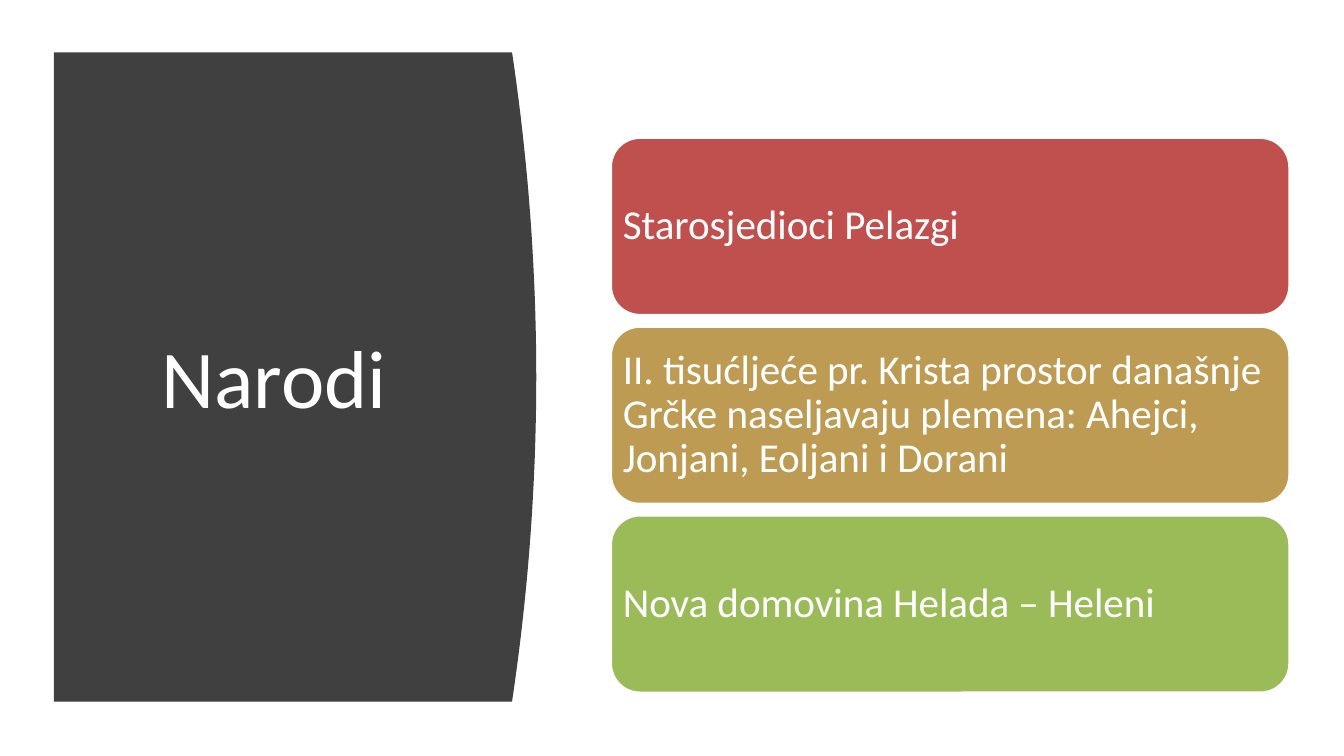
from dataclasses import dataclass

from pptx import Presentation
from pptx.dml.color import RGBColor
from pptx.enum.shapes import MSO_SHAPE
from pptx.enum.text import MSO_ANCHOR, MSO_AUTO_SIZE, PP_ALIGN
from pptx.util import Inches, Pt

ROUND = MSO_SHAPE.ROUNDED_RECTANGLE
MIDDLE = MSO_ANCHOR.MIDDLE
NO_FIT = MSO_AUTO_SIZE.NONE
LEFT, CENTER = PP_ALIGN.LEFT, PP_ALIGN.CENTER


@dataclass(frozen=True)
class Theme:
    font: str = "Calibri"
    white: RGBColor = RGBColor.from_string("FFFFFF")
    dark: RGBColor = RGBColor.from_string("404040")
    red: RGBColor = RGBColor.from_string("C0504D")
    gold: RGBColor = RGBColor.from_string("BD9B53")
    green: RGBColor = RGBColor.from_string("9BBB59")
    title: Pt = Pt(44)
    body: Pt = Pt(22)


THEME = Theme()
CARDS = [
    ("Starosjedioci Pelazgi", THEME.red),
    ("II. tisućljeće pr. Krista prostor današnje Grčke naseljavaju "
     "plemena: Ahejci, Jonjani, Eoljani i Dorani", THEME.gold),
    ("Nova domovina Helada – Heleni", THEME.green),
]


def set_text(shape, text, size, align):
    frame = shape.text_frame
    frame.word_wrap = True
    frame.auto_size = NO_FIT
    frame.vertical_anchor = MIDDLE
    frame.text = text
    para = frame.paragraphs[0]
    para.alignment = align
    para.font.name = THEME.font
    para.font.size = size
    para.font.color.rgb = THEME.white
    return frame


def add_panel(slide):
    """Draw the dark panel whose right edge is a shallow parabola."""
    left, top, high = 0.4, 0.39, 4.83
    edge, bulge, steps = 3.81, 0.18, 40
    curve = []
    for i in range(steps + 1):
        t = i / steps
        x = edge + bulge * (1 - (2 * t - 1) ** 2)
        curve.append((Inches(x), Inches(top + high * t)))
    pen = slide.shapes.build_freeform(Inches(left), Inches(top))
    pen.add_line_segments(curve + [(Inches(left), Inches(top + high))])
    panel = pen.convert_to_shape()
    panel.shadow.inherit = False
    panel.fill.solid()
    panel.fill.fore_color.rgb = THEME.dark
    panel.line.fill.background()


def add_title(slide, text):
    title = slide.shapes.title
    title.left, title.top = Inches(0.71), Inches(0.83)
    title.width, title.height = Inches(2.8), Inches(3.93)
    set_text(title, text, THEME.title, CENTER)
    # Bring the title in front of the panel
    slide.shapes._spTree.append(title._element)


def add_card(slide, top, text, color):
    card = slide.shapes.add_shape(
        ROUND, Inches(4.54), Inches(top), Inches(5.06), Inches(1.33))
    card.shadow.inherit = False
    card.fill.solid()
    card.fill.fore_color.rgb = color
    card.line.color.rgb = THEME.white
    card.line.width = Pt(2)
    frame = set_text(card, text, THEME.body, LEFT)
    frame.margin_left = frame.margin_right = Inches(0.03)
    frame.margin_top = frame.margin_bottom = Inches(0.03)
    frame.paragraphs[0].line_spacing = 0.9


def main():
    deck = Presentation()
    deck.slide_width = Inches(10)
    deck.slide_height = deck.slide_width * 9 // 16
    slide = deck.slides.add_slide(deck.slide_layouts[5])
    add_panel(slide)
    add_title(slide, "Narodi ")
    for i, (text, color) in enumerate(CARDS):
        add_card(slide, 1.02 + 1.405 * i, text, color)
    deck.save("out.pptx")


if __name__ == "__main__":
    main()
